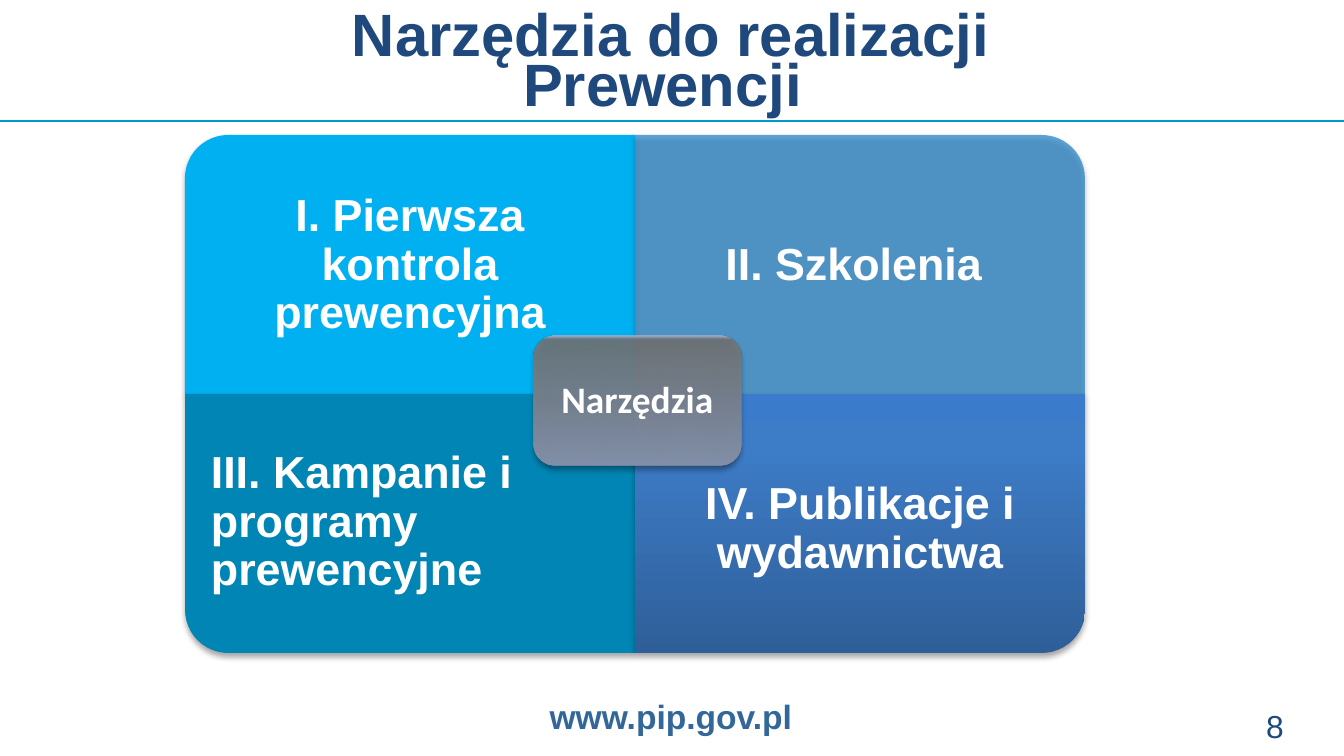
import lxml.etree
import pptx
import pptx.dml.color
import pptx.enum.shapes
import pptx.enum.text
import pptx.oxml.ns
import pptx.util

PX = 914400 / 134.4
NAVY = "1F497D"
WHITE = "FFFFFF"
SHAPES = pptx.enum.shapes.MSO_SHAPE
ALIGN = pptx.enum.text.PP_ALIGN
ANCHOR = pptx.enum.text.MSO_ANCHOR
qn = pptx.oxml.ns.qn


def px(length):
    return pptx.util.Emu(round(length * PX))


def rgb(colour):
    return pptx.dml.color.RGBColor.from_string(colour)


def add_colour(parent, colour, alpha=100):
    """Append a colour element, alpha in percent."""
    node = lxml.etree.SubElement(parent, qn("a:srgbClr"), val=str(rgb(colour)))
    if alpha < 100:
        lxml.etree.SubElement(node, qn("a:alpha"), val=str(alpha * 1000))


def write(frame, text, size=24, font="Arial", colour=WHITE, bold=True,
          align=ALIGN.CENTER, anchor=ANCHOR.MIDDLE, spacing=0.9, insets=(13, 7)):
    frame.word_wrap = True
    frame.vertical_anchor = anchor
    frame.margin_left = frame.margin_right = px(insets[0])
    frame.margin_top = frame.margin_bottom = px(insets[1])
    paragraph = frame.paragraphs[0]
    paragraph.text = text
    paragraph.alignment = align
    paragraph.line_spacing = spacing
    for run in paragraph.runs:
        run.font.size = pptx.util.Pt(size)
        run.font.name = font
        run.font.bold = bold
        run.font.color.rgb = rgb(colour)


def add_text(slide, box, text, **style):
    write(slide.shapes.add_textbox(*map(px, box)).text_frame, text, **style)


def add_panel(slide, kind, box, stops, turn=0):
    """Add a shadowed shape; stops are (position, colour, alpha), from bottom to top."""
    left, top, width, height = box
    if turn % 180:
        left, top = left + (width - height) / 2, top + (height - width) / 2
        width, height = height, width
    panel = slide.shapes.add_shape(kind, *map(px, (left, top, width, height)))
    panel.rotation = turn
    panel.line.fill.background()
    properties = panel._element.spPr
    if len(stops) == 1:
        panel.fill.solid()
        solid = properties.find(qn("a:solidFill"))
        add_colour(solid, *stops[0][1:])
    else:
        panel.fill.gradient()
        panel.fill.gradient_angle = 90
        gradient = properties.find(qn("a:gradFill"))
        gradient.set("rotWithShape", "0")
        stop_list = gradient.find(qn("a:gsLst"))
        for stop in list(stop_list):
            stop_list.remove(stop)
        for position, colour, alpha in stops:
            stop = lxml.etree.SubElement(stop_list, qn("a:gs"), pos=str(position * 1000))
            add_colour(stop, colour, alpha)
    panel.shadow.inherit = False
    shadow = lxml.etree.SubElement(
        properties.find(qn("a:effectLst")), qn("a:outerShdw"),
        blurRad=str(pptx.util.Pt(3.1)), dist=str(pptx.util.Pt(1.8)),
        dir="5400000", rotWithShape="0")
    add_colour(shadow, "000000", 35)
    return panel


def add_header(slide, box):
    left, top, width, height = box
    rule = slide.shapes.add_connector(
        pptx.enum.shapes.MSO_CONNECTOR.STRAIGHT,
        *map(px, (left, top + height, left + width, top + height)))
    rule.line.color.rgb = rgb("0099CC")
    rule.line.width = pptx.util.Pt(1.5)
    lxml.etree.SubElement(rule._element.spPr, qn("a:effectLst"))
    add_text(slide, (left + 67, top + 11, width - 136, 123),
             "Narzędzia do realizacji\nPrewencji ", size=32, colour=NAVY,
             anchor=ANCHOR.TOP, spacing=pptx.util.Pt(27))


def add_matrix(slide, box):
    """Four quadrants with rounded outer corners around a central label."""
    left, top, width, height = box
    cell_width, cell_height = width / 2, height / 2
    blues = [(0, "2F5F99", 100), (80, "3D7CC7", 100), (100, "3A7CCB", 100)]
    # text, fill stops, rotation, alignment, text offset
    quadrants = [
        ("I. Pierwsza kontrola prewencyjna", [(0, "00B0F0", 100)], 270, ALIGN.CENTER, 1),
        ("II. Szkolenia ", [(0, "0070C0", 61)], 0, ALIGN.CENTER, 1),
        ("III. Kampanie i programy prewencyjne", [(0, "0085B4", 100)], 180, ALIGN.LEFT, -1),
        ("IV. Publikacje i wydawnictwa", blues, 90, ALIGN.CENTER, 6),
    ]
    for index, (text, stops, turn, align, offset) in enumerate(quadrants):
        row, column = divmod(index, 2)
        x, y = left + column * cell_width, top + row * cell_height
        add_panel(slide, SHAPES.ROUND_1_RECTANGLE, (x, y, cell_width, cell_height), stops, turn)
        add_text(slide, (x, y + offset, cell_width, cell_height), text,
                 align=align, insets=(26, 26))

    greys = [(2, "818FA8", 100), (97, "737373", 87), (100, "A7BADC", 100)]
    centre = add_panel(slide, SHAPES.ROUNDED_RECTANGLE,
                       (left + 349, top + 201, 207, 130), greys)
    write(centre.text_frame, "Narzędzia", size=20, font="Calibri", insets=(11, 11))


def add_footer(slide, box):
    left, top, width, height = box
    add_text(slide, (left + 513, top, 316, height), "www.pip.gov.pl",
             size=18, colour="336699", spacing=1.0)
    add_text(slide, (left + width - 91, top + 4, 75, height), "8", size=17, colour=NAVY,
             bold=False, align=ALIGN.LEFT, anchor=ANCHOR.TOP, spacing=1.0)


def main():
    deck = pptx.Presentation()
    deck.slide_width, deck.slide_height = px(1344), px(756)
    slide = deck.slides.add_slide(deck.slide_layouts[6])
    add_header(slide, (0, 0, 1344, 121))
    add_matrix(slide, (185, 135, 900, 518))
    add_footer(slide, (0, 696, 1344, 40))
    deck.save("out.pptx")


if __name__ == "__main__":
    main()
